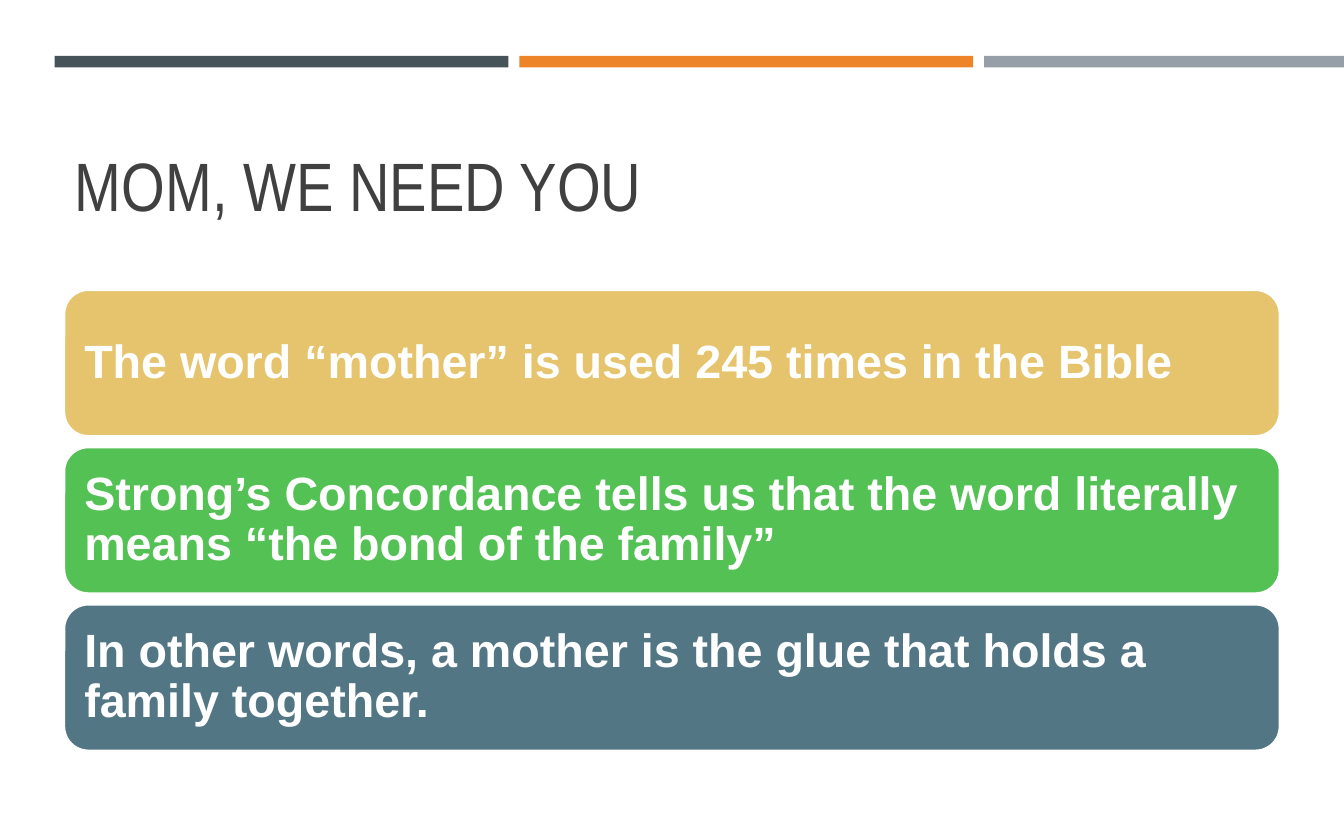
import pptx
import pptx.util
import pptx.dml.color
import pptx.enum.shapes
import pptx.enum.text

Cm = pptx.util.Cm
Pt = pptx.util.Pt
RGBColor = pptx.dml.color.RGBColor
MSO_SHAPE = pptx.enum.shapes.MSO_SHAPE
MSO_ANCHOR = pptx.enum.text.MSO_ANCHOR
PP_ALIGN = pptx.enum.text.PP_ALIGN

WHITE = RGBColor(0xFF, 0xFF, 0xFF)
CHARCOAL = RGBColor(0x40, 0x40, 0x40)
SLATE = RGBColor(0x46, 0x53, 0x59)
ORANGE = RGBColor(0xED, 0x84, 0x28)
GREY = RGBColor(0x96, 0x9F, 0xA7)
GOLD = RGBColor(0xE6, 0xC4, 0x6D)
GREEN = RGBColor(0x54, 0xC1, 0x55)
TEAL = RGBColor(0x53, 0x76, 0x85)

TITLE_FONT = {"name": "Arial Narrow", "size": Pt(44), "bold": False}
STATEMENT_FONT = {"name": "Arial", "size": Pt(30), "bold": True}

STATEMENTS = [
    ("The word “mother” is used 245 times in the Bible", GOLD),
    ("Strong’s Concordance tells us that the word literally means “the bond of the family”", GREEN),
    ("In other words, a mother is the glue that holds a family together.", TEAL),
]


def set_attributes(target, values):
    for attribute, value in values.items():
        setattr(target, attribute, value)


def write_text(frame, text, font_values, color, frame_values):
    set_attributes(frame, {"word_wrap": True, **frame_values})
    paragraph = frame.paragraphs[0]
    paragraph.text = text
    set_attributes(paragraph, {"alignment": PP_ALIGN.LEFT, "line_spacing": 0.9})
    set_attributes(paragraph.font, font_values)
    paragraph.font.color.rgb = color


def add_filled_shape(slide, preset, left, top, width, height, color):
    shape = slide.shapes.add_shape(preset, Cm(left), Cm(top), Cm(width), Cm(height))
    shape.shadow.inherit = False
    shape.fill.solid()
    shape.fill.fore_color.rgb = color
    return shape


def add_header_bars(slide, left, top, width, height, gap):
    for index, color in enumerate((SLATE, ORANGE, GREY)):
        bar_left = left + index * (width + gap)
        bar = add_filled_shape(slide, MSO_SHAPE.RECTANGLE, bar_left, top, width, height, color)
        bar.line.fill.background()


def add_title(slide, left, top, width, height):
    title = slide.shapes.add_textbox(Cm(left), Cm(top), Cm(width), Cm(height))
    write_text(title.text_frame, "MOM, WE NEED YOU", TITLE_FONT, CHARCOAL,
               {"vertical_anchor": MSO_ANCHOR.BOTTOM})


def add_statements(slide, left, top, width, height, gap):
    card_height = (height - gap * (len(STATEMENTS) - 1)) / len(STATEMENTS)
    margins = {f"margin_{side}": Cm(0.3) for side in ("left", "top", "right", "bottom")}
    for index, (statement, color) in enumerate(STATEMENTS):
        card_top = top + index * (card_height + gap)
        card = add_filled_shape(slide, MSO_SHAPE.ROUNDED_RECTANGLE,
                                left, card_top, width, card_height, color)
        card.line.color.rgb = WHITE
        card.line.width = Pt(1.75)
        write_text(card.text_frame, statement, STATEMENT_FONT, WHITE,
                   {"vertical_anchor": MSO_ANCHOR.MIDDLE, **margins})


def main():
    presentation = pptx.Presentation()
    set_attributes(presentation, {"slide_width": Cm(30.48), "slide_height": Cm(19.05)})
    slide = presentation.slides.add_slide(presentation.slide_layouts[6])
    add_header_bars(slide, 1.24, 1.27, 10.29, 0.26, 0.25)
    add_title(slide, 1.45, 1.96, 27.58, 3.3)
    add_statements(slide, 1.45, 6.57, 27.58, 10.46, 0.24)
    presentation.save("out.pptx")


if __name__ == "__main__":
    main()
